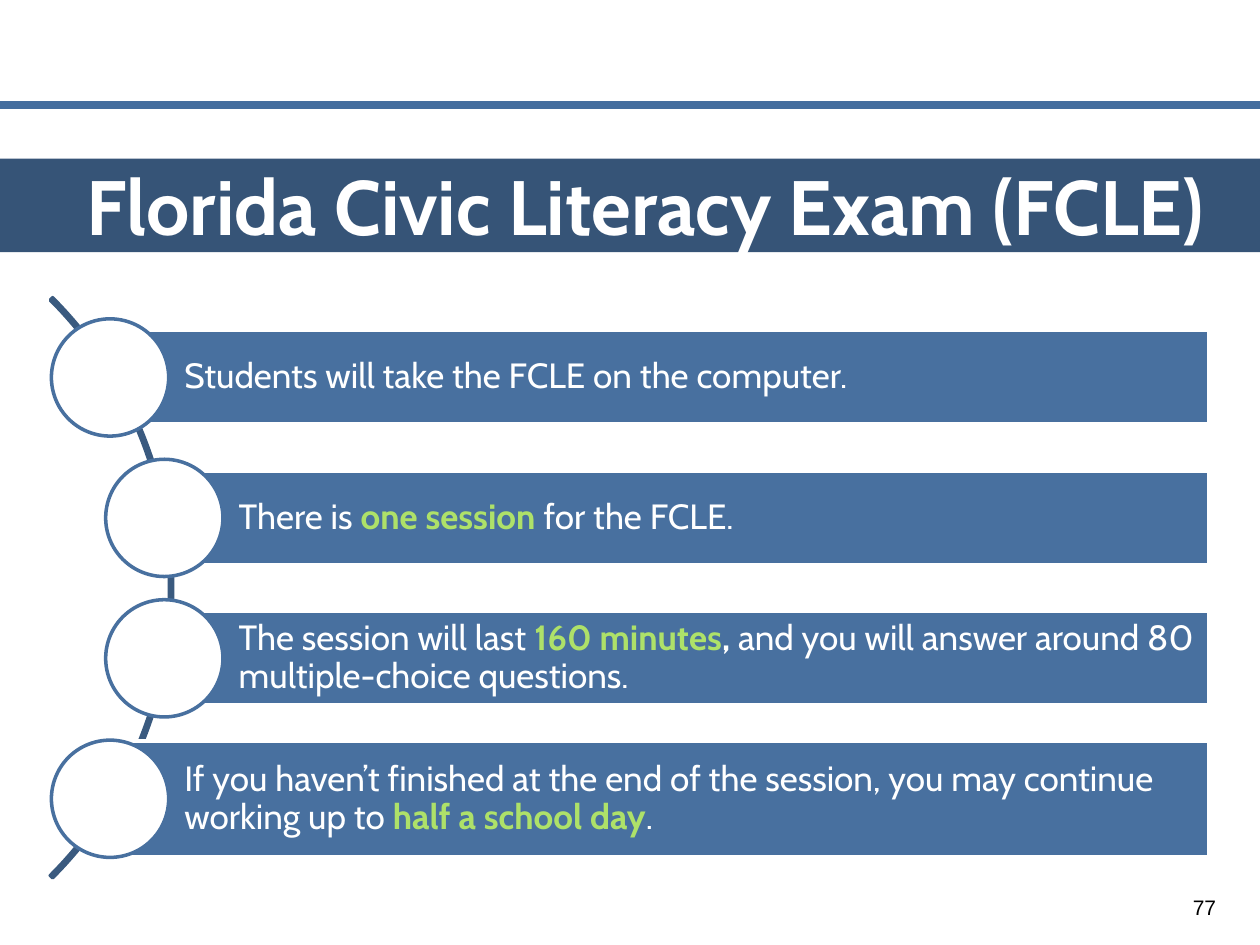
from lxml import etree
from pptx import Presentation
from pptx.dml.color import RGBColor
from pptx.enum.shapes import MSO_CONNECTOR, MSO_SHAPE
from pptx.enum.text import MSO_ANCHOR, MSO_AUTO_SIZE, PP_ALIGN
from pptx.oxml.ns import qn
from pptx.util import Pt

TITLE = "Florida Civic Literacy Exam (FCLE)"
PAGE_NUMBER = "77"
# Each step: circle centre x, bar height, spans of (text, style)
STEPS = [
    (62.9, 53.5, [("Students will take the FCLE on the computer.", "plain")]),
    (93.9, 53.5, [("There is ", "plain"), ("one session ", "accent"),
                  ("for the FCLE.", "plain")]),
    (93.9, 53.5, [("The session will last ", "plain"), ("160 minutes", "accent"),
                  (", ", "bold"),
                  ("and you will answer around 80 multiple-choice questions.", "plain")]),
    (62.9, 66.2, [("If you haven’t finished at the end of the session, "
                   "you may continue working up to ", "plain"),
                  ("half a school day", "accent"), (".", "plain")]),
]
COLOURS = {"rule": "446D9E", "arc": "3A5A7F", "bar": "48709F", "band": "365477",
           "accent": "AEE169", "white": "FFFFFF", "black": "000000"}
FIRST_CENTRE, PITCH = 215.7, 80.25
DIAMETER = 67
BAR_RIGHT = 690.9
ARC_CENTRE = (-135.7, 335.9)
ARC_RADIUS = 234.4


def colour(name):
    return RGBColor.from_string(COLOURS[name])


def set_insets(frame, left, others):
    frame.margin_left = Pt(left)
    frame.margin_top = frame.margin_right = frame.margin_bottom = Pt(others)


def set_font(font, name, size, colour_name):
    font.name, font.size = name, Pt(size)
    font.color.rgb = colour(colour_name)


def add_outlined(page, kind, left, top, width, height, fill, line):
    shape = page.shapes.add_shape(kind, Pt(left), Pt(top), Pt(width), Pt(height))
    shape.shadow.inherit = False
    if fill:
        shape.fill.solid()
        shape.fill.fore_color.rgb = colour(fill)
    else:
        shape.fill.background()
    shape.line.color.rgb = colour(line)
    shape.line.width = Pt(2)
    return shape


def add_title(page):
    title = page.shapes.title
    title.left, title.top, title.width, title.height = Pt(-0.5), Pt(90.7), Pt(721), Pt(53.4)
    title.fill.solid()
    title.fill.fore_color.rgb = colour("band")
    frame = title.text_frame
    frame.text = TITLE
    frame.auto_size = MSO_AUTO_SIZE.NONE
    frame.vertical_anchor = MSO_ANCHOR.TOP
    set_insets(frame, 0, 0)
    paragraph = frame.paragraphs[0]
    paragraph.alignment = PP_ALIGN.CENTER
    properties = paragraph._p.get_or_add_pPr()
    properties.set("marL", str(Pt(18)))
    properties.set("indent", "0")
    set_font(paragraph.font, "Cabin", 44, "white")
    paragraph.font.bold = True


def add_rule(page):
    rule = page.shapes.add_connector(MSO_CONNECTOR.STRAIGHT, Pt(0), Pt(59.8), Pt(720), Pt(59.8))
    rule.line.color.rgb = colour("rule")
    rule.line.width = Pt(4.5)
    etree.SubElement(rule._element.spPr, qn("a:effectLst"))


def add_arc(page):
    left, top = (centre - ARC_RADIUS for centre in ARC_CENTRE)
    arc = add_outlined(page, MSO_SHAPE.BLOCK_ARC, left, top,
                       2 * ARC_RADIUS, 2 * ARC_RADIUS, None, "arc")
    # Start and end angles (315 and 45 degrees), then the thickness
    for index, value in enumerate((189, 27, 0.004)):
        arc.adjustments[index] = value


def add_step(page, centre_x, centre_y, bar_height, spans):
    bar = add_outlined(page, MSO_SHAPE.RECTANGLE, centre_x, centre_y - bar_height / 2,
                       BAR_RIGHT - centre_x, bar_height, "bar", "white")
    frame = bar.text_frame
    frame.word_wrap = True
    frame.vertical_anchor = MSO_ANCHOR.MIDDLE
    set_insets(frame, 42.5, 4)
    paragraph = frame.paragraphs[0]
    paragraph.alignment = PP_ALIGN.LEFT
    paragraph.line_spacing = 0.9
    for text, style in spans:
        span = paragraph.add_run()
        span.text = text
        set_font(span.font, "Cabin", 20, "accent" if style == "accent" else "white")
        span.font.bold = style != "plain"
    add_outlined(page, MSO_SHAPE.OVAL, centre_x - DIAMETER / 2, centre_y - DIAMETER / 2,
                 DIAMETER, DIAMETER, "white", "bar")


def add_page_number(page):
    box = page.shapes.add_textbox(Pt(671.8), Pt(504), Pt(33), Pt(28.8))
    frame = box.text_frame
    frame.word_wrap = True
    frame.vertical_anchor = MSO_ANCHOR.MIDDLE
    frame.text = PAGE_NUMBER
    paragraph = frame.paragraphs[0]
    paragraph.alignment = PP_ALIGN.CENTER
    set_font(paragraph.font, "Arial", 12, "black")


def main():
    deck = Presentation()
    deck.slide_width, deck.slide_height = Pt(720), Pt(540)
    page = deck.slides.add_slide(deck.slide_layouts[5])
    add_title(page)
    add_rule(page)
    add_arc(page)
    for index, (centre_x, bar_height, spans) in enumerate(STEPS):
        add_step(page, centre_x, FIRST_CENTRE + index * PITCH, bar_height, spans)
    add_page_number(page)
    deck.save("out.pptx")


if __name__ == "__main__":
    main()
